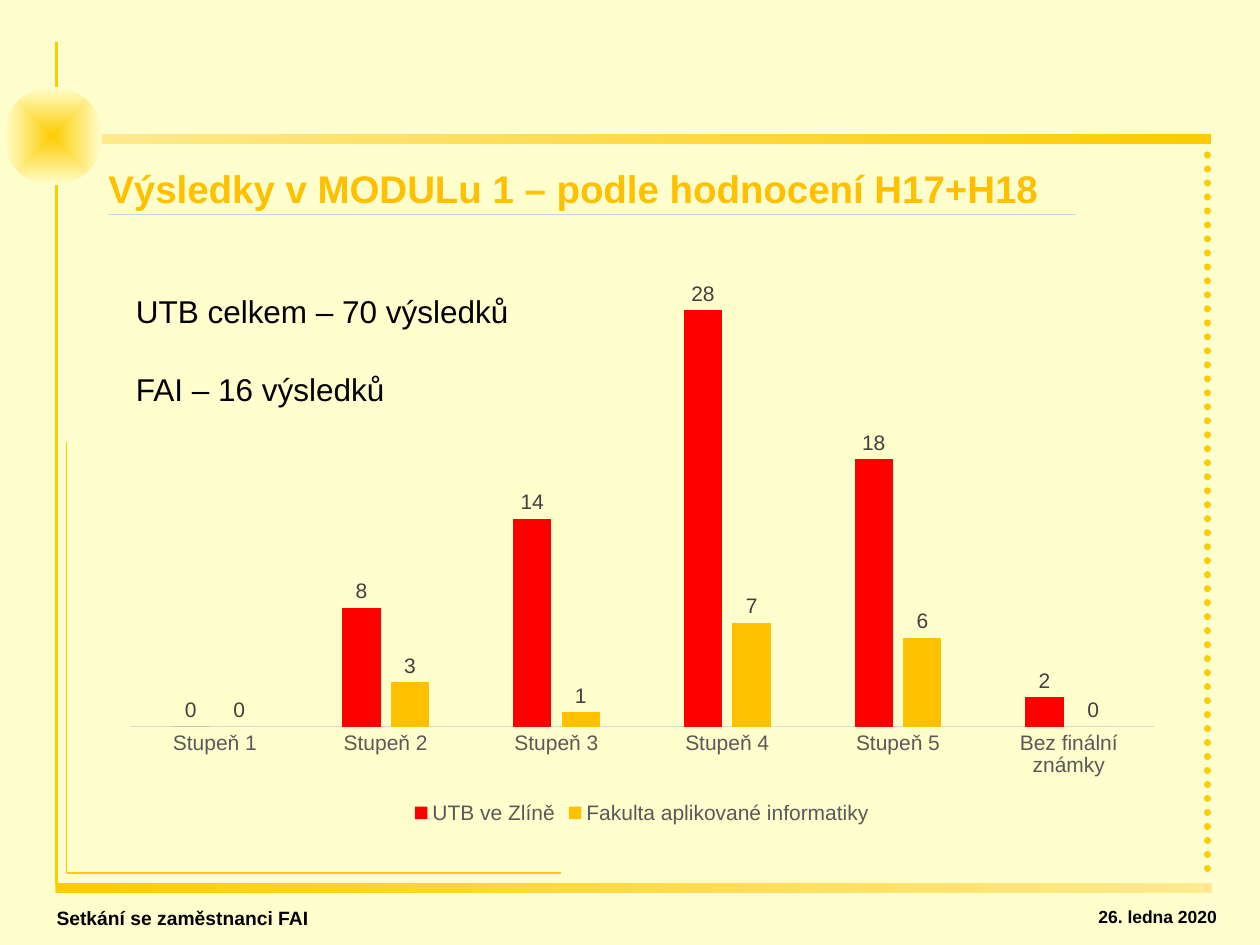
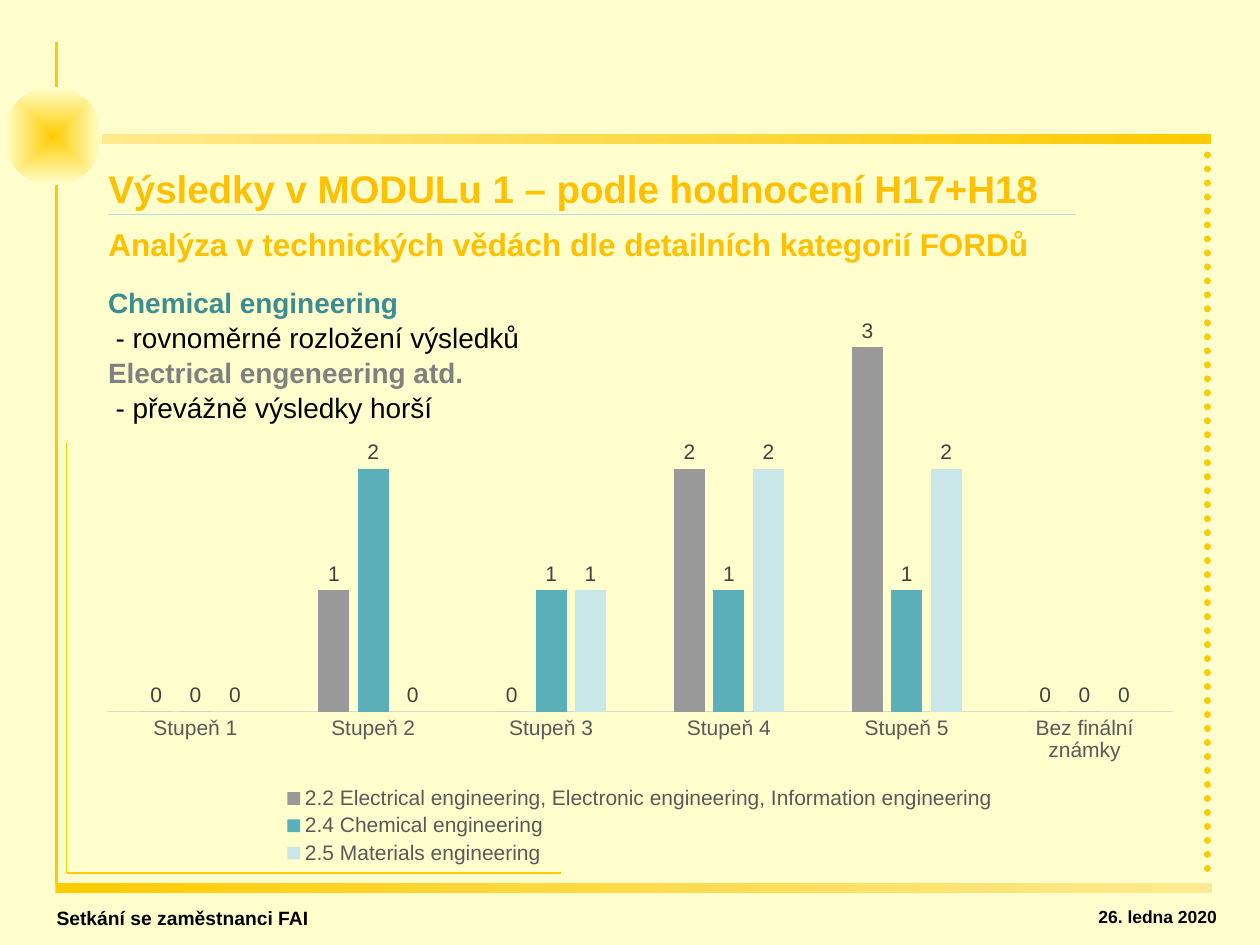
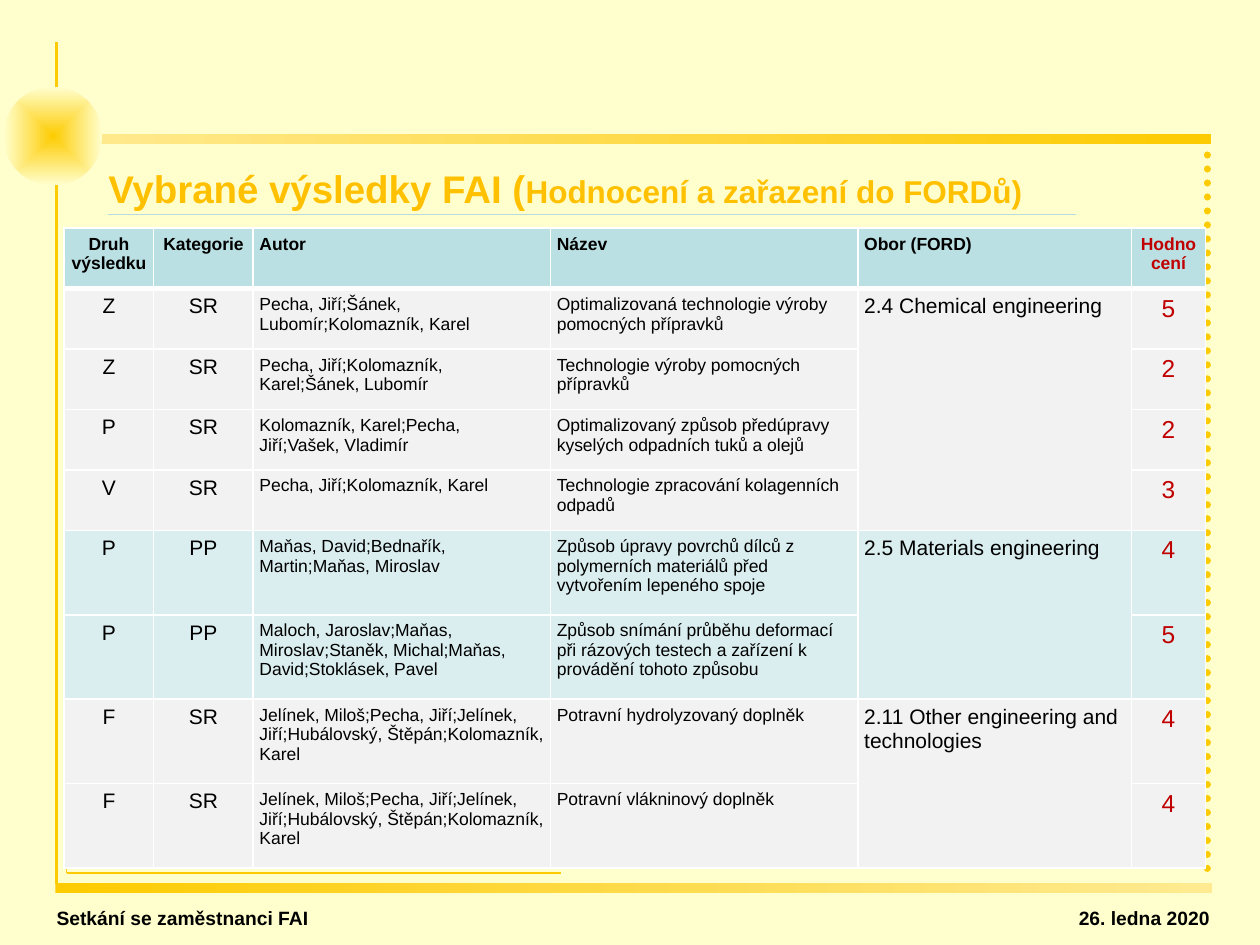
import lxml.etree
import pptx
import pptx.chart.data
import pptx.dml.color
import pptx.enum.chart
import pptx.enum.dml
import pptx.enum.shapes
import pptx.enum.text
import pptx.oxml.ns
import pptx.util

Inches = pptx.util.Inches
Pt = pptx.util.Pt
RGBColor = pptx.dml.color.RGBColor
qn = pptx.oxml.ns.qn
SHAPES = pptx.enum.shapes.MSO_SHAPE
ALIGN = pptx.enum.text.PP_ALIGN

CREAM = RGBColor(0xFF, 0xFF, 0xCD)
GOLD = RGBColor(0xFD, 0xCB, 0x01)
PALE_GOLD = RGBColor(0xFF, 0xEA, 0x91)
AMBER = RGBColor(0xFF, 0xC0, 0x00)
RED = RGBColor(0xFF, 0x00, 0x00)
DARK_RED = RGBColor(0xC0, 0x00, 0x00)
BLACK = RGBColor(0x00, 0x00, 0x00)
WHITE = RGBColor(0xFF, 0xFF, 0xFF)
LABEL_GREY = RGBColor(0x40, 0x40, 0x40)
AXIS_GREY = RGBColor(0x59, 0x59, 0x59)
AXIS_LINE = RGBColor(0xD9, 0xD9, 0xD9)
TEXT_GREY = RGBColor(0x80, 0x80, 0x80)
BAR_GREY = RGBColor(0x99, 0x99, 0x99)
DARK_TEAL = RGBColor(0x3C, 0x8C, 0x93)
TEAL = RGBColor(0x5A, 0xAF, 0xB8)
PALE_TEAL = RGBColor(0xC9, 0xE6, 0xE9)
RULE_TEAL = RGBColor(0xB6, 0xDC, 0xDF)
HEADER_TEAL = RGBColor(0xBB, 0xE0, 0xE3)
ROW_TEAL = RGBColor(0xDA, 0xED, 0xEF)
ROW_GREY = RGBColor(0xF2, 0xF2, 0xF2)

FONT = "Arial"
FOOTER = "Setkání se zaměstnanci FAI"
DATE = "26. ledna 2020"
RESULTS_TITLE = "Výsledky v MODULu 1 – podle hodnocení H17+H18"
GRADES = [f"Stupeň {grade}" for grade in range(1, 6)] + ["Bez finální známky"]

COLUMN_WIDTHS = [0.71, 0.79, 2.36, 2.44, 2.17, 0.59]
ROW_HEIGHTS = [0.48] * 5 + [0.67] * 4
HEADINGS = ["Druh výsledku", "Kategorie", "Autor", "Název", "Obor (FORD)", "Hodnocení"]
CENTRED_COLUMNS = (0, 1, 5)
BODY_SIZES = [12, 12, 10, 10, 12, 14]
SUPPLEMENT_AUTHORS = "Jelínek, Miloš;Pecha, Jiří;Jelínek, Jiří;Hubálovský, Štěpán;Kolomazník, Karel"
FIELDS = [
    ("2.4 Chemical engineering", ROW_GREY, [
        ("Z", "SR", "Pecha, Jiří;Šánek, Lubomír;Kolomazník, Karel",
         "Optimalizovaná technologie výroby pomocných přípravků", "5"),
        ("Z", "SR", "Pecha, Jiří;Kolomazník, Karel;Šánek, Lubomír",
         "Technologie výroby pomocných přípravků", "2"),
        ("P", "SR", "Kolomazník, Karel;Pecha, Jiří;Vašek, Vladimír",
         "Optimalizovaný způsob předúpravy kyselých odpadních tuků a olejů", "2"),
        ("V", "SR", "Pecha, Jiří;Kolomazník, Karel",
         "Technologie zpracování kolagenních odpadů", "3"),
    ]),
    ("2.5 Materials engineering", ROW_TEAL, [
        ("P", "PP", "Maňas, David;Bednařík, Martin;Maňas, Miroslav",
         "Způsob úpravy povrchů dílců z polymerních materiálů před vytvořením lepeného spoje", "4"),
        ("P", "PP", "Maloch, Jaroslav;Maňas, Miroslav;Staněk, Michal;Maňas, David;Stoklásek, Pavel",
         "Způsob snímání průběhu deformací při rázových testech a zařízení k provádění tohoto způsobu", "5"),
    ]),
    ("2.11 Other engineering and technologies", ROW_GREY, [
        ("F", "SR", SUPPLEMENT_AUTHORS, "Potravní hydrolyzovaný doplněk", "4"),
        ("F", "SR", SUPPLEMENT_AUTHORS, "Potravní vlákninový doplněk", "4"),
    ]),
]


def set_values(target, values):
    for name, value in values.items():
        setattr(target, name, value)


def style_font(font, size, color, bold=False):
    set_values(font, {"name": FONT, "size": Pt(size), "bold": bold})
    font.color.rgb = color


def add_span(para, text, size, color, bold=False):
    span = para.add_run()
    span.text = text
    style_font(span.font, size, color, bold)


def next_para(frame, index):
    return frame.paragraphs[0] if index == 0 else frame.add_paragraph()


def add_line(page, start, end, color, width, dotted=False):
    line = page.shapes.add_connector(
        pptx.enum.shapes.MSO_CONNECTOR.STRAIGHT, *map(Inches, start + end))
    line.line.color.rgb = color
    line.line.width = Pt(width)
    properties = line.element.spPr
    if dotted:
        line.line.dash_style = pptx.enum.dml.MSO_LINE.ROUND_DOT
        properties.find(qn("a:ln")).set("cap", "rnd")
    lxml.etree.SubElement(properties, qn("a:effectLst"))


def add_gradient_shape(page, kind, place, first, last):
    shape = page.shapes.add_shape(kind, *map(Inches, place))
    shape.shadow.inherit = False
    shape.line.fill.background()
    shape.fill.gradient()
    shape.fill.gradient_angle = 0
    for stop, color in zip(shape.fill.gradient_stops, (first, last)):
        stop.color.rgb = color
    return shape


def make_radial(shape):
    gradient = shape.element.spPr.find(qn("a:gradFill"))
    gradient.remove(gradient.find(qn("a:lin")))
    radial = lxml.etree.Element(qn("a:path"), path="shape")
    centre = lxml.etree.SubElement(radial, qn("a:fillToRect"))
    for side in "ltrb":
        centre.set(side, "50000")
    gradient.find(qn("a:gsLst")).addnext(radial)


def add_text(page, place, lines, align=ALIGN.LEFT, line_spacing=None, gap=0):
    box = page.shapes.add_textbox(*map(Inches, place))
    box.text_frame.word_wrap = True
    for index, (text, size, color, bold, indent) in enumerate(lines):
        para = next_para(box.text_frame, index)
        set_values(para, {"alignment": align, "line_spacing": line_spacing})
        if index and gap:
            para.space_before = Pt(gap)
        if indent:
            para._p.get_or_add_pPr().set("marL", str(Inches(indent)))
        add_span(para, text, size, color, bold)


def add_frame(page):
    add_gradient_shape(page, SHAPES.RECTANGLE, (0.44, 7.01, 9.18, 0.08), GOLD, PALE_GOLD)
    add_gradient_shape(page, SHAPES.RECTANGLE, (0.48, 1.06, 9.13, 0.08), PALE_GOLD, GOLD)
    add_line(page, (0.45, 0.33), (0.45, 7.02), GOLD, 1.5)
    add_line(page, (9.58, 1.23), (9.58, 6.94), GOLD, 4, dotted=True)
    make_radial(add_gradient_shape(
        page, SHAPES.FLOWCHART_SUMMING_JUNCTION, (0.03, 0.69, 0.78, 0.78), GOLD, CREAM))
    add_line(page, (0.53, 3.51), (0.53, 6.93), GOLD, 0.75)
    add_line(page, (0.53, 6.93), (4.45, 6.93), GOLD, 1)
    add_line(page, (0.86, 1.7), (8.54, 1.7), RULE_TEAL, 0.75)


def set_title(page, lines):
    title = page.shapes.title
    set_values(title, {"left": Inches(0.76), "top": Inches(1.15),
                       "width": Inches(8.58), "height": Inches(1.02)})
    frame = title.text_frame
    set_values(frame, {"word_wrap": True, "margin_top": Inches(0.16),
                       "auto_size": pptx.enum.text.MSO_AUTO_SIZE.NONE,
                       "vertical_anchor": pptx.enum.text.MSO_ANCHOR.TOP})
    for index, spans in enumerate(lines):
        para = next_para(frame, index)
        set_values(para, {"alignment": ALIGN.LEFT, "space_before": Pt(0), "space_after": Pt(8)})
        for text, size in spans:
            add_span(para, text, size, AMBER, True)


def add_page(deck, title_lines, date_left=8.62, date_size=10, date_align=ALIGN.LEFT):
    page = deck.slides.add_slide(deck.slide_layouts[5])
    add_frame(page)
    set_title(page, title_lines)
    add_text(page, (0.35, 7.14, 4.49, 0.24), [(FOOTER, 11, BLACK, True, 0)])
    add_text(page, (date_left, 7.14, 1.26, 0.24), [(DATE, date_size, BLACK, True, 0)], date_align)
    return page


def add_grade_chart(page, place, series_list):
    data = pptx.chart.data.CategoryChartData(number_format="#,##0")
    data.categories = GRADES
    for name, values, color in series_list:
        data.add_series(name, values)
    chart = page.shapes.add_chart(
        pptx.enum.chart.XL_CHART_TYPE.COLUMN_CLUSTERED, *map(Inches, place), data).chart
    style_font(chart.font, 10, BLACK)
    set_values(chart, {"has_title": False, "has_legend": True})
    set_values(chart.legend, {"position": pptx.enum.chart.XL_LEGEND_POSITION.BOTTOM,
                              "include_in_layout": False})
    style_font(chart.legend.font, 12, AXIS_GREY)
    set_values(chart.value_axis, {"visible": False, "has_major_gridlines": False})
    axis = chart.category_axis
    axis.major_tick_mark = pptx.enum.chart.XL_TICK_MARK.NONE
    axis.format.line.color.rgb = AXIS_LINE
    axis.format.line.width = Pt(0.75)
    style_font(axis.tick_labels.font, 12, AXIS_GREY)
    plot = chart.plots[0]
    set_values(plot, {"gap_width": 219, "overlap": -27, "vary_by_categories": False})
    for series, (name, values, color) in zip(plot.series, series_list):
        series.format.fill.solid()
        series.format.fill.fore_color.rgb = color
        labels = series.data_labels
        set_values(labels, {"show_value": True, "number_format": "#,##0",
                            "number_format_is_linked": False,
                            "position": pptx.enum.chart.XL_LABEL_POSITION.OUTSIDE_END})
        style_font(labels.font, 12, LABEL_GREY)


def add_borders(cell, widths):
    properties = cell._tc.get_or_add_tcPr()
    for side, width in zip("LRTB", widths):
        border = lxml.etree.SubElement(properties, qn(f"a:ln{side}"), w=str(Pt(width)))
        fill = lxml.etree.SubElement(border, qn("a:solidFill"))
        lxml.etree.SubElement(fill, qn("a:srgbClr"), val=str(WHITE))


def fill_cell(cell, text, column, size, bold, fill, widths):
    add_borders(cell, widths)
    cell.fill.solid()
    cell.fill.fore_color.rgb = fill
    for side in ("left", "top", "right", "bottom"):
        setattr(cell, f"margin_{side}", Inches(0.05))
    if text:
        para = cell.text_frame.paragraphs[0]
        para.alignment = ALIGN.CENTER if column in CENTRED_COLUMNS else ALIGN.LEFT
        add_span(para, text, size, DARK_RED if column == 5 else BLACK, bold)


def add_results_table(page):
    table = page.shapes.add_table(
        len(ROW_HEIGHTS), len(COLUMN_WIDTHS),
        *map(Inches, (0.51, 1.81, sum(COLUMN_WIDTHS), sum(ROW_HEIGHTS)))).table
    set_values(table, {"first_row": False, "horz_banding": False})
    for column, width in zip(table.columns, COLUMN_WIDTHS):
        column.width = Inches(width)
    for row, height in zip(table.rows, ROW_HEIGHTS):
        row.height = Inches(height)
    for column, heading in enumerate(HEADINGS):
        fill_cell(table.cell(0, column), heading, column, 10, True, HEADER_TEAL, (1, 1, 1, 3))
    row = 1
    for field, fill, results in FIELDS:
        table.cell(row, 4).merge(table.cell(row + len(results) - 1, 4))
        for index, result in enumerate(results):
            texts = (*result[:4], "" if index else field, result[4])
            widths = (1, 1, 3 if row == 1 else 1, 1)
            for column, text in enumerate(texts):
                fill_cell(table.cell(row, column), text, column,
                          BODY_SIZES[column], False, fill, widths)
            row += 1


def main():
    deck = pptx.Presentation()
    deck.slide_width = Inches(10)
    deck.slide_height = Inches(7.5)
    background = deck.slide_master.background.fill
    background.solid()
    background.fore_color.rgb = CREAM

    page = add_page(deck, [[(RESULTS_TITLE, 22)]])
    add_grade_chart(page, (0.86, 2.14, 8.47, 4.44), [
        ("UTB ve Zlíně", (0, 8, 14, 28, 18, 2), RED),
        ("Fakulta aplikované informatiky", (0, 3, 1, 7, 6, 0), AMBER),
    ])
    add_text(page, (0.98, 2.25, 3.31, 1.01), [
        ("UTB celkem – 70 výsledků", 18, BLACK, False, 0),
        ("FAI – 16 výsledků", 18, BLACK, False, 0),
    ], line_spacing=1.05, gap=22)

    page = add_page(deck, [
        [(RESULTS_TITLE, 22)],
        [("Analýza v technických vědách dle detailních kategorií FORDů", 18)],
    ])
    add_grade_chart(page, (0.67, 2.18, 8.82, 4.72), [
        ("2.2 Electrical engineering, Electronic engineering, Information engineering",
         (0, 1, 0, 2, 3, 0), BAR_GREY),
        ("2.4 Chemical engineering", (0, 2, 1, 1, 1, 0), TEAL),
        ("2.5 Materials engineering", (0, 0, 1, 2, 2, 0), PALE_TEAL),
    ])
    add_text(page, (0.76, 2.2, 4.33, 1.18), [
        ("Chemical engineering", 16, DARK_TEAL, True, 0),
        ("- rovnoměrné rozložení výsledků", 16, BLACK, False, 0.06),
        ("Electrical engeneering atd.", 16, TEXT_GREY, True, 0),
        ("- převážně výsledky horší", 16, BLACK, False, 0.06),
    ], line_spacing=1.05)

    page = add_page(
        deck, [[("Vybrané výsledky FAI (", 22), ("Hodnocení a zařazení do FORDů)", 18)]],
        date_left=8.44, date_size=11, date_align=ALIGN.RIGHT)
    add_results_table(page)

    deck.save("out.pptx")


if __name__ == "__main__":
    main()
